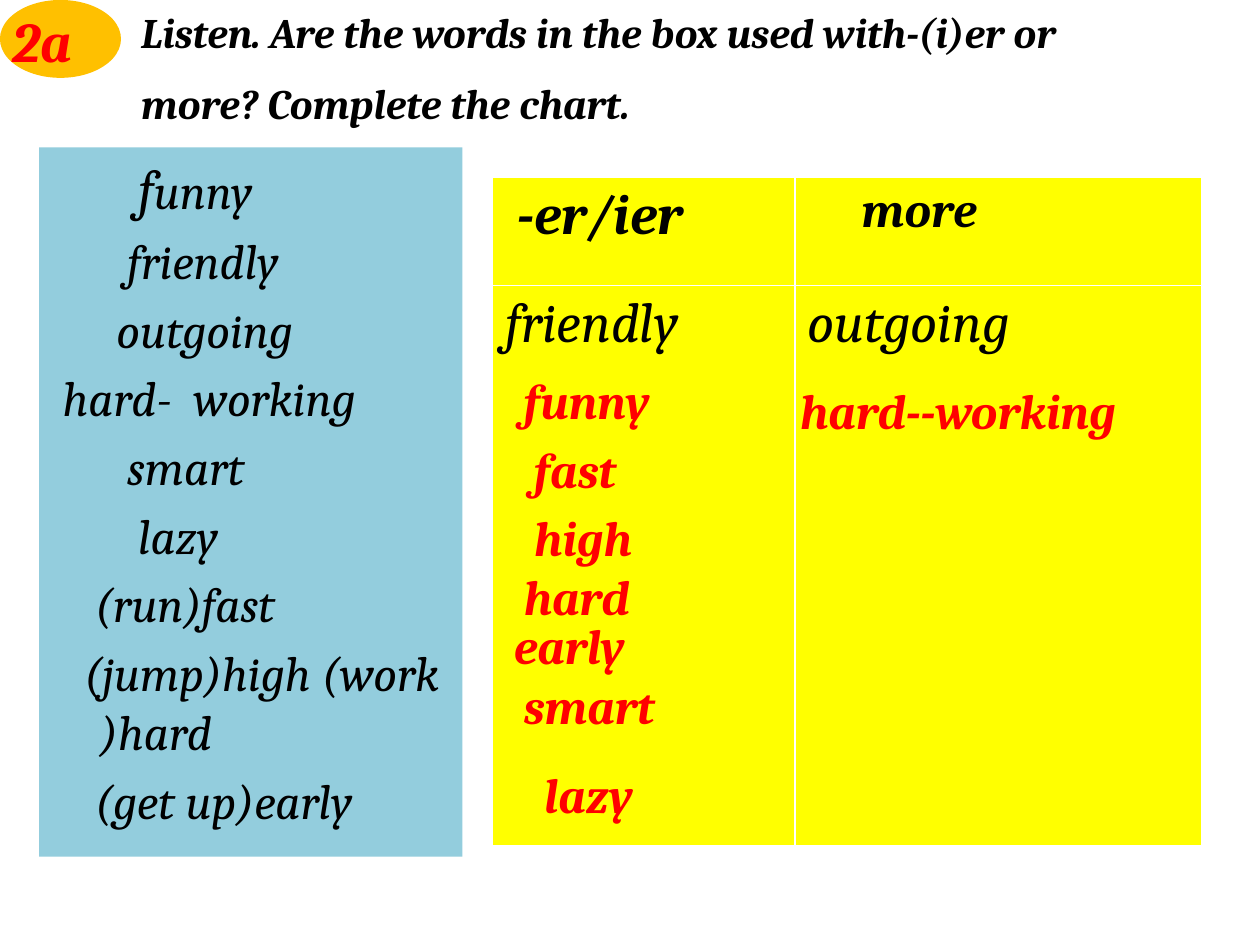
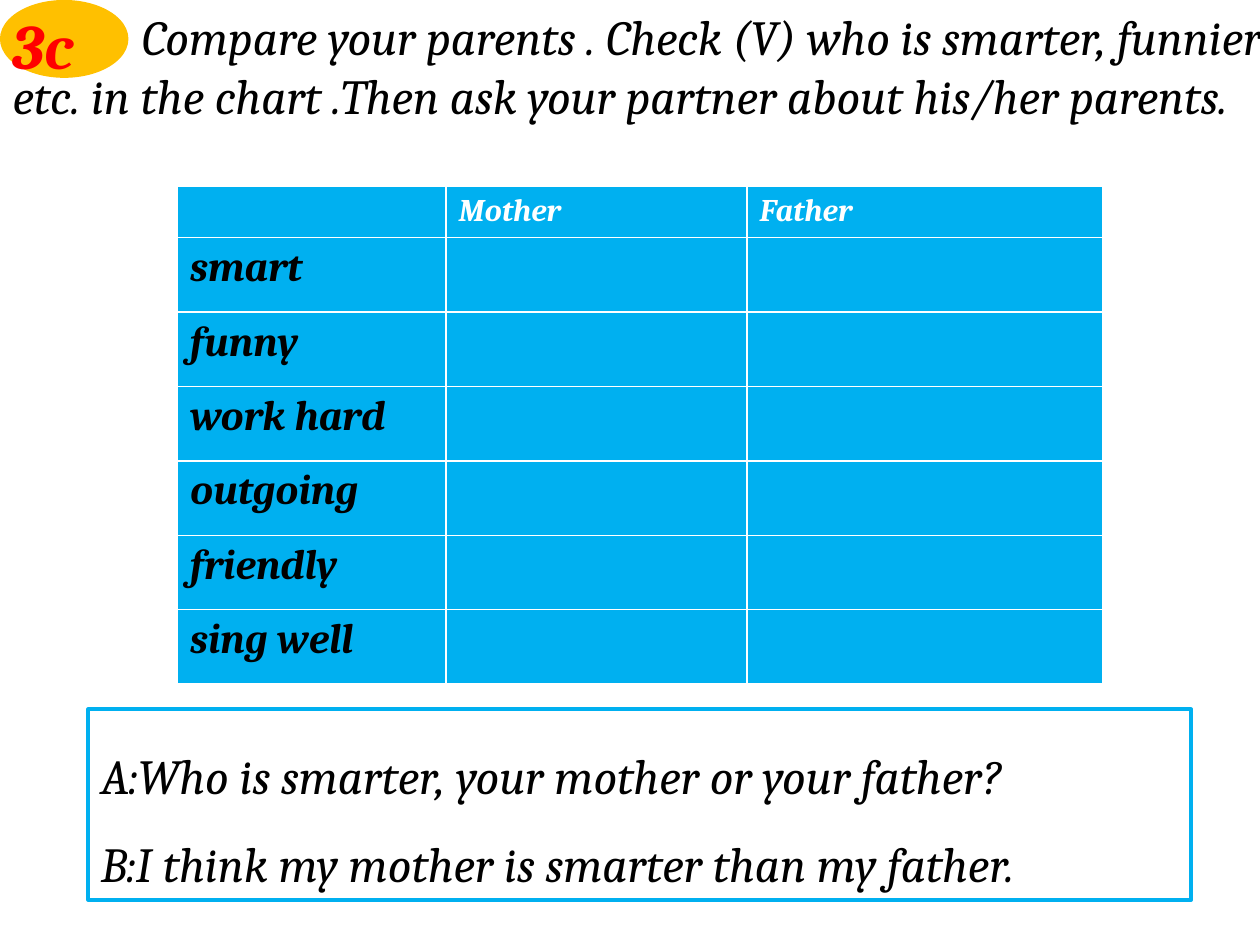
"""Build two English lesson slides on comparative adjectives."""
import pptx
import pptx.dml.color
import pptx.enum.shapes
import pptx.enum.text
import pptx.util

Cm = pptx.util.Cm
Pt = pptx.util.Pt
RGBColor = pptx.dml.color.RGBColor

BLACK = RGBColor(0x00, 0x00, 0x00)
WHITE = RGBColor(0xFF, 0xFF, 0xFF)
RED = RGBColor(0xFF, 0x00, 0x00)
AMBER = RGBColor(0xFF, 0xC0, 0x00)
YELLOW = RGBColor(0xFF, 0xFF, 0x00)
PALE_BLUE = RGBColor(0x93, 0xCD, 0xDD)
BLUE = RGBColor(0x00, 0xB0, 0xF0)

FONT = {"name": "Cambria", "italic": True}
FRAME = {
    "word_wrap": True,
    "auto_size": pptx.enum.text.MSO_AUTO_SIZE.NONE,
    "vertical_anchor": pptx.enum.text.MSO_ANCHOR.TOP,
}
HANGING = 0.97
SPACE = 0.2173

WORDS = [
    (8, [("f", 32), ("unny", 28)]),
    (7, [("friendly", 28)]),
    (6, [("outgoing", 28)]),
    (1, [("hard-  working", 28)]),
    (7, [("smart", 28)]),
    (8, [("lazy", 28)]),
    (4, [("(run)fast", 28)]),
    (3, [("(jump)high (work )hard", 28)]),
    (4, [("(get up)early", 28)]),
]
ANSWERS = [
    ("funny", 10.31, 7.34, 3.76),
    ("fast", 10.52, 8.74, 2.97),
    ("high", 10.52, 10.11, 2.97),
    ("hard", 10.31, 11.3, 3.58),
    ("early", 10.11, 12.29, 3.58),
    ("smart", 10.31, 13.49, 4.57),
    ("lazy", 10.72, 15.29, 4.57),
    ("hard--working", 15.88, 7.54, 8.74),
]
QUALITIES = ["smart", "funny", "work hard", "outgoing", "friendly", "sing well"]


def apply(target, values):
    """Set every attribute named in a dict of format values."""
    for name, value in values.items():
        setattr(target, name, value)


def write(p, runs, color=BLACK, bold=False, margin=0, indent=0, before=0, spacing=1.0):
    """Fill a paragraph with (text, size) runs and set its layout."""
    apply(p, {
        "alignment": pptx.enum.text.PP_ALIGN.LEFT,
        "space_before": Pt(before),
        "line_spacing": spacing,
    })
    pPr = p._p.get_or_add_pPr()
    pPr.set("marL", str(Cm(margin)))
    pPr.set("indent", str(Cm(indent)))
    pPr.append(pptx.oxml.parse_xml(
        '<a:buNone xmlns:a="http://schemas.openxmlformats.org/drawingml/2006/main"/>'))
    for text, size in runs:
        r = p.add_run()
        r.text = text
        apply(r.font, FONT | {"size": Pt(size), "bold": bold})
        r.font.color.rgb = color


def place(sp, left, top, width, height):
    """Position a shape and return its cleared first paragraph's frame."""
    apply(sp, {"left": Cm(left), "top": Cm(top), "width": Cm(width), "height": Cm(height)})
    apply(sp.text_frame, FRAME)
    return sp.text_frame


def paragraphs(tf, count):
    """Return the given number of paragraphs of a text frame."""
    return [tf.paragraphs[0]] + [tf.add_paragraph() for _ in range(count - 1)]


def add_label(s, text, size, left, top, width, height):
    """Add a bold red label."""
    tf = place(s.shapes.add_textbox(0, 0, 0, 0), left, top, width, height)
    write(tf.paragraphs[0], [(text, size)], RED, bold=True)


def add_badge(s, text, size, width):
    """Add the exercise number on an amber oval in the corner."""
    sp = s.shapes.add_shape(
        pptx.enum.shapes.MSO_SHAPE.OVAL, 0, 0, Cm(width), Cm(1.57))
    sp.shadow.inherit = False
    sp.fill.solid()
    sp.fill.fore_color.rgb = AMBER
    sp.line.fill.background()
    add_label(s, text, size, 0, 0, width + 0.2, 1.6)


def add_grid(s, left, top, widths, heights, color):
    """Add a table of one fill colour with the given columns and rows."""
    table = s.shapes.add_table(
        len(heights), len(widths), Cm(left), Cm(top),
        Cm(sum(widths)), Cm(sum(heights))).table
    table.horz_banding = False
    for column, width in zip(table.columns, widths):
        column.width = Cm(width)
    for row, height in zip(table.rows, heights):
        row.height = Cm(height)
    for cell in table.iter_cells():
        cell.fill.solid()
        cell.fill.fore_color.rgb = color
    return table


def write_cell(table, row, column, text, size, **layout):
    """Write one table cell."""
    write(table.cell(row, column).text_frame.paragraphs[0], [(text, size)], **layout)


def build_word_sorting(s):
    """Build the slide that sorts adjectives by comparative form."""
    lines = ["Listen. Are the words in the box used with-(i)er or",
             "more? Complete the chart."]
    tf = place(s.shapes.title, 2.59, 0, 23.42, 2.82)
    for p, line in zip(paragraphs(tf, len(lines)), lines):
        write(p, [(line, 24)], bold=True, before=12)

    box = s.placeholders[1]
    box.fill.solid()
    box.fill.fore_color.rgb = PALE_BLUE
    tf = place(box, 0.79, 2.97, 8.53, 14.3)
    for p, (spaces, runs) in zip(paragraphs(tf, len(WORDS)), WORDS):
        write(p, runs, margin=HANGING, indent=spaces * SPACE - HANGING, before=5.6)

    add_badge(s, "2a", 32, 2.44)
    table = add_grid(s, 9.93, 3.58, [6.1, 8.2], [2.18, 11.28], YELLOW)
    write_cell(table, 0, 0, "-er/ier", 32, bold=True, indent=0.25)
    write_cell(table, 0, 1, "more", 28, bold=True, indent=5 * SPACE)
    write_cell(table, 1, 0, "friendly", 32)
    write_cell(table, 1, 1, "outgoing", 32)
    for word, left, top, width in ANSWERS:
        add_label(s, word, 28, left, top, width, 1.45)


def build_parent_survey(s):
    """Build the slide that compares the parents."""
    tf = place(s.shapes.title, 0, 0, 26.39, 3.84)
    write(tf.paragraphs[0], [(
        "Compare your parents . Check (V) who is smarter, funnier , etc. in the chart "
        ".Then ask your partner about his/her parents.", 28)], indent=12 * SPACE)

    lines = ["A:Who is smarter, your mother or your father?",
             "B:I think my mother is smarter than my father."]
    box = s.placeholders[1]
    box.line.color.rgb = BLUE
    box.line.width = Pt(2.25)
    tf = place(box, 1.78, 14.3, 22.23, 3.84)
    for p, line in zip(paragraphs(tf, len(lines)), lines):
        write(p, [(line, 28)], spacing=1.5)

    add_badge(s, "3c", 36, 2.59)
    table = add_grid(s, 3.58, 3.76, [5.41, 6.07, 7.16],
                     [0.99] + [1.5] * len(QUALITIES), BLUE)
    for column, parent in enumerate(["Mother", "Father"], 1):
        write_cell(table, 0, column, parent, 18, color=WHITE, bold=True)
    for row, quality in enumerate(QUALITIES, 1):
        write_cell(table, row, 0, quality, 24, bold=True)


def main():
    """Create the presentation and save it."""
    prs = pptx.Presentation()
    apply(prs, {"slide_width": Cm(25.4), "slide_height": Cm(19.05)})
    for build in (build_word_sorting, build_parent_survey):
        build(prs.slides.add_slide(prs.slide_layouts[1]))
    prs.save("out.pptx")


if __name__ == "__main__":
    main()
